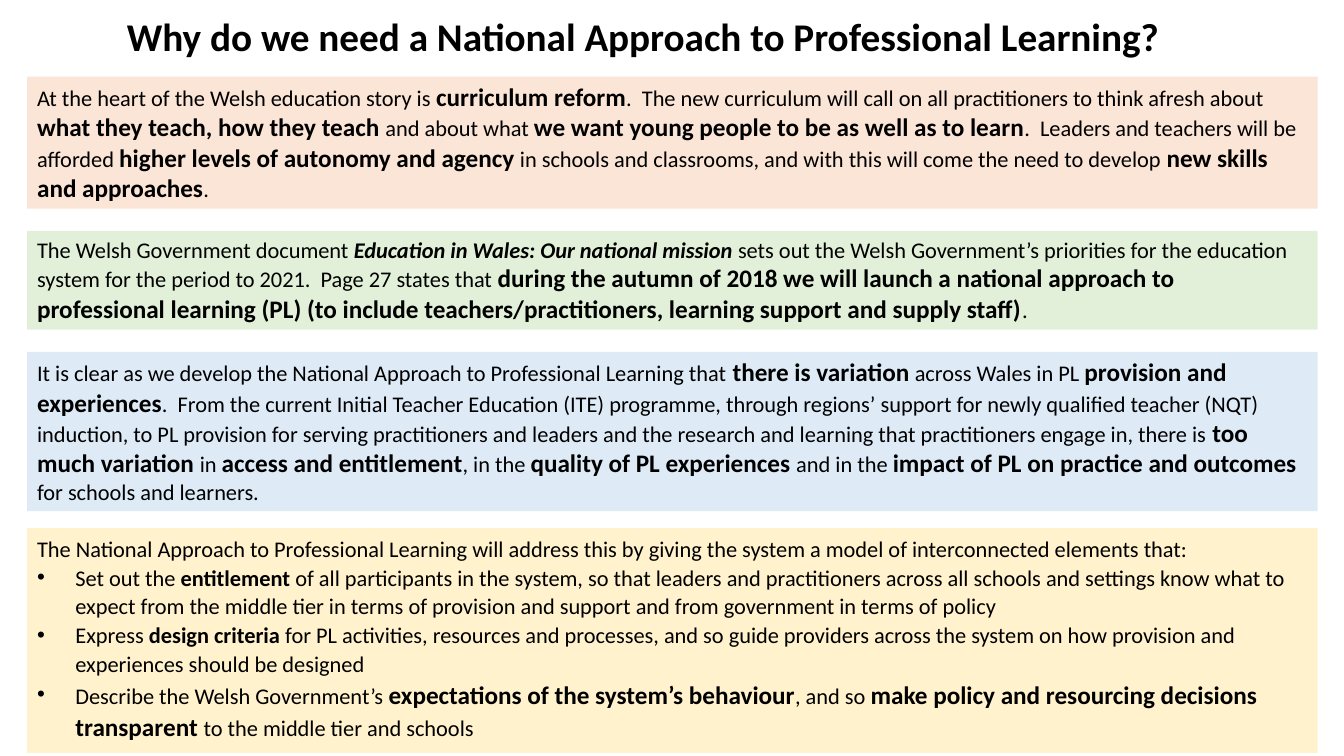
from dataclasses import dataclass

from pptx import Presentation
from pptx.dml.color import RGBColor
from pptx.enum.shapes import MSO_SHAPE
from pptx.enum.text import MSO_ANCHOR, MSO_AUTO_SIZE, PP_ALIGN
from pptx.oxml.xmlchemy import OxmlElement
from pptx.util import Inches, Pt

FONT = "Calibri"
BLACK = RGBColor(0x00, 0x00, 0x00)
PEACH = RGBColor(0xFB, 0xE5, 0xD6)
GREEN = RGBColor(0xE2, 0xF0, 0xD9)
BLUE = RGBColor(0xDE, 0xEB, 0xF7)
YELLOW = RGBColor(0xFF, 0xF2, 0xCC)
PANEL_LEFT, PANEL_WIDTH = 0.27, 12.8
BULLET_INDENT = 0.38


@dataclass(frozen=True)
class Span:
    text: str
    size: int = 16
    bold: bool = False
    italic: bool = False


@dataclass(frozen=True)
class Para:
    spans: list[Span]
    bullet: bool = False


@dataclass(frozen=True)
class Panel:
    top: float
    height: float
    fill: RGBColor
    paras: list[Para]
    line_spacing: float = 1.0


def key(text: str) -> Span:
    """Large bold wording for a key phrase."""
    return Span(text, 18, bold=True)


PANELS = [
    Panel(0.76, 1.31, PEACH, [Para([
        Span("At the heart of the Welsh education story is "),
        key("curriculum reform"),
        Span(".  The new curriculum will call on all practitioners to think afresh about "),
        key("what they teach, how they teach "),
        Span("and about what "),
        key("we want young people to be as well as to learn"),
        Span(".  Leaders and teachers will be afforded "),
        key("higher levels of autonomy and agency"),
        Span(" in schools and classrooms, and with this will come the need to develop "),
        key("new skills and approaches"),
        Span("."),
    ])]),
    Panel(2.29, 0.98, GREEN, [Para([
        Span("The Welsh Government document "),
        Span("Education in Wales: Our national mission", bold=True, italic=True),
        Span(" sets out the Welsh Government’s priorities for the education system "
             "for the period to 2021.  Page 27 states that "),
        key("during the autumn of 2018 we will launch a national approach to professional "
            "learning (PL) (to include teachers/practitioners, learning support and supply staff)"),
        Span("."),
    ])]),
    Panel(3.49, 1.58, BLUE, [Para([
        Span("It is clear as we develop the National Approach to Professional Learning that"),
        key(" there is variation"),
        Span(" across Wales in PL "),
        key("provision and experiences"),
        Span(".  From the current Initial Teacher Education (ITE) programme, through regions’ "
             "support for newly qualified teacher (NQT) induction, to PL provision for serving "
             "practitioners and leaders and the research and learning that practitioners "
             "engage in, there is "),
        key("too much variation "),
        Span("in "),
        key("access and entitlement"),
        Span(", in the "),
        key("quality of PL experiences "),
        Span("and in the "),
        key("impact of PL on practice and outcomes "),
        Span("for schools and learners."),
    ])]),
    Panel(5.24, 2.23, YELLOW, [
        Para([Span("The National Approach to Professional Learning will address this by giving "
                   "the system a model of interconnected elements that:")]),
        Para([
            Span("Set out the "),
            Span("entitlement", bold=True),
            Span(" of all participants in the system, so that leaders and practitioners across "
                 "all schools and settings know what to expect from the middle tier in terms of "
                 "provision and support and from government in terms of policy"),
        ], bullet=True),
        Para([
            Span("Express "),
            Span("design criteria", bold=True),
            Span(" for PL activities, resources and processes, and so guide providers across "
                 "the system on how provision and experiences should be designed"),
        ], bullet=True),
        Para([
            Span("Describe the Welsh Government’s "),
            key("expectations of the system’s behaviour"),
            Span(", and so "),
            key("make policy and resourcing decisions transparent "),
            Span("to the middle tier and schools"),
        ], bullet=True),
    ], line_spacing=1.07),
]


def add_bullet(p) -> None:
    pPr = p._p.get_or_add_pPr()
    pPr.set("marL", str(Inches(BULLET_INDENT)))
    pPr.set("indent", str(-Inches(BULLET_INDENT)))
    font = OxmlElement("a:buFont")
    font.set("typeface", "Arial")
    char = OxmlElement("a:buChar")
    char.set("char", "•")
    pPr.extend([font, char])


def write_paras(tf, paras: list[Para], align: PP_ALIGN, line_spacing: float = 1.0) -> None:
    tf.word_wrap = True
    tf.auto_size = MSO_AUTO_SIZE.SHAPE_TO_FIT_TEXT
    tf.vertical_anchor = MSO_ANCHOR.TOP
    for i, para in enumerate(paras):
        p = tf.paragraphs[0] if i == 0 else tf.add_paragraph()
        p.alignment = align
        p.line_spacing = line_spacing
        if para.bullet:
            add_bullet(p)
        for span in para.spans:
            r = p.add_run()
            r.text = span.text
            r.font.name = FONT
            r.font.size = Pt(span.size)
            r.font.bold = span.bold
            r.font.italic = span.italic
            r.font.color.rgb = BLACK


def add_panel(slide, panel: Panel) -> None:
    sp = slide.shapes.add_shape(
        MSO_SHAPE.RECTANGLE, Inches(PANEL_LEFT), Inches(panel.top),
        Inches(PANEL_WIDTH), Inches(panel.height))
    sp.shadow.inherit = False
    sp.fill.solid()
    sp.fill.fore_color.rgb = panel.fill
    sp.line.fill.background()
    write_paras(sp.text_frame, panel.paras, PP_ALIGN.LEFT, panel.line_spacing)


def main() -> None:
    prs = Presentation()
    prs.slide_width, prs.slide_height = Inches(13.33), Inches(7.5)
    s = prs.slides.add_slide(prs.slide_layouts[6])
    title = s.shapes.add_textbox(Inches(1.12), Inches(0.07), Inches(10.51), Inches(0.57))
    heading = Span("Why do we need a National Approach to Professional Learning?", 28, bold=True)
    write_paras(title.text_frame, [Para([heading])], PP_ALIGN.CENTER)
    for panel in PANELS:
        add_panel(s, panel)
    prs.save("out.pptx")


if __name__ == "__main__":
    main()
